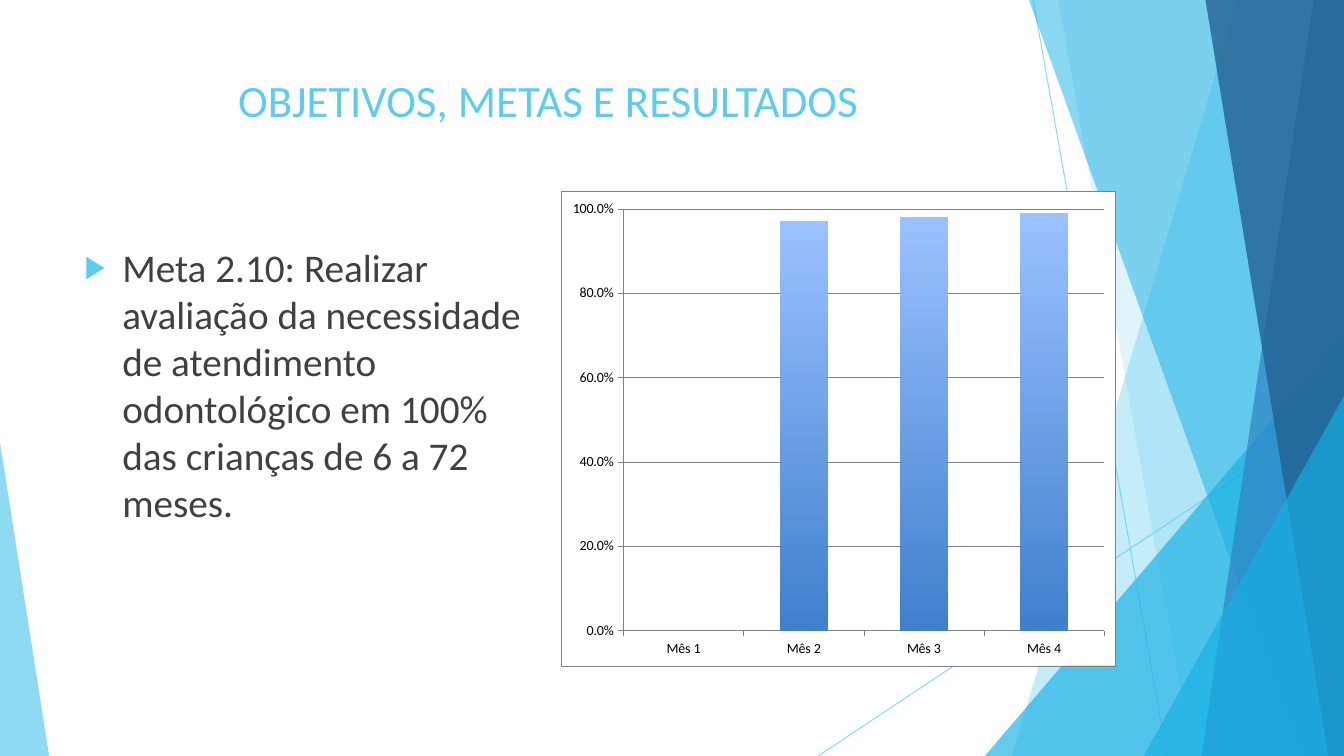
from lxml import etree
from pptx import Presentation
from pptx import util as u
from pptx.chart import data as cd
from pptx.dml import color as dc
from pptx.enum import chart as ec
from pptx.enum import shapes as es
from pptx.enum import text as et
from pptx.oxml import ns
from pptx.oxml import parse_xml

HUES = {
    "sky": "5FCBEF", "cyan": "17B0E4", "blue": "2E83C3", "navy": "226292",
    "ink": "404040", "black": "000000", "white": "FFFFFF", "grey": "808080",
    "light": "9BC1FF", "deep": "3F80CD",
}
WIDE, HIGH = 33.87, 19.05


def rgb(name):
    return dc.RGBColor.from_string(HUES[name])


def cms(*sizes):
    return [u.Cm(size) for size in sizes]


def fade(shape, alpha):
    for node in shape._element.spPr.iter(ns.qn("a:srgbClr")):
        etree.SubElement(node, ns.qn("a:alpha"), val=str(alpha * 1000))


def paint(shape, hue, alpha):
    shape.shadow.inherit = False
    shape.fill.solid()
    shape.fill.fore_color.rgb = rgb(hue)
    shape.line.fill.background()
    fade(shape, alpha)


def pen(line, hue="grey", width=0.25):
    line.color.rgb = rgb(hue)
    line.width = u.Pt(width)


def write(holder, words, size, hue, align=et.PP_ALIGN.LEFT, before=0, bullet=None):
    frame = holder.text_frame
    frame.word_wrap = True
    frame.auto_size = et.MSO_AUTO_SIZE.NONE
    frame.vertical_anchor = et.MSO_ANCHOR.TOP
    para = frame.paragraphs[0]
    para.alignment = align
    para.space_before = u.Pt(before)
    run = para.add_run()
    run.text = words
    run.font.name = "Calibri"
    run.font.size = u.Pt(size)
    run.font.color.rgb = rgb(hue)
    if bullet:
        props = para._p.get_or_add_pPr()
        props.set("marL", str(u.Cm(0.95)))
        props.set("indent", str(-u.Cm(0.95)))
        tint = etree.SubElement(props, ns.qn("a:buClr"))
        etree.SubElement(tint, ns.qn("a:srgbClr"), val=HUES["sky"])
        etree.SubElement(props, ns.qn("a:buSzPct"), val="80000")
        etree.SubElement(props, ns.qn("a:buFont"), typeface="Calibri")
        etree.SubElement(props, ns.qn("a:buChar"), char=bullet)


def place(holder, box):
    holder.left, holder.top, holder.width, holder.height = cms(*box)


def ray(slide, start, end):
    line = slide.shapes.add_connector(es.MSO_CONNECTOR.STRAIGHT, *cms(*start, *end))
    pen(line.line, "sky", 0.75)
    fade(line, 70)
    etree.SubElement(line._element.spPr, ns.qn("a:effectLst"))


def facet(slide, box, upper, lower, hue, alpha):
    left, top, wide, high = box
    right, base = left + wide, top + high
    form = slide.shapes.build_freeform(*cms(right - upper, top), scale=1.0)
    corners = [(right, top), (right, base), (right - lower, base)]
    form.add_line_segments([cms(*spot) for spot in corners], close=True)
    paint(form.convert_to_shape(), hue, alpha)


def wedge(slide, box, wide, high, peak, hue, alpha):
    left = box[0] + peak * (box[2] - wide)
    top = box[1] + box[3] - high
    shape = slide.shapes.add_shape(
        es.MSO_SHAPE.ISOSCELES_TRIANGLE, *cms(left, top, wide, high))
    shape.adjustments[0] = peak
    paint(shape, hue, alpha)


def decor(slide, box):
    left, top, wide, high = box
    right, base = left + wide, top + high
    ray(slide, (right - 7.83, top), (right - 4.46, base))
    ray(slide, (right, top + 10.24), (right - 13.25, base))
    facet(slide, box, 2.68, 8.37, "sky", 36)
    facet(slide, box, 7.2, 3.82, "sky", 20)
    wedge(slide, box, 9.05, 10.59, 1, "cyan", 66)
    facet(slide, box, 7.94, 1.08, "cyan", 50)
    facet(slide, box, 0.77, 3.59, "blue", 70)
    facet(slide, box, 3.49, 0.39, "navy", 80)
    wedge(slide, box, 5.05, 9.07, 1, "cyan", 66)
    wedge(slide, box, 1.24, 7.9, 0, "sky", 70)


def panel(edge=""):
    return parse_xml(
        f'<c:spPr {ns.nsdecls("c", "a")}><a:solidFill><a:srgbClr val="{HUES["white"]}"/>'
        f'</a:solidFill>{edge}</c:spPr>')


def graph(slide, box):
    data = cd.CategoryChartData(number_format="0.0%")
    data.categories = [f"Mês {month}" for month in range(1, 5)]
    data.add_series("Series 1", (0, 0.97, 0.98, 0.99))
    chart = slide.shapes.add_chart(
        ec.XL_CHART_TYPE.COLUMN_CLUSTERED, *cms(*box), data).chart
    chart.has_legend = False
    chart.has_title = False
    chart.font.name = "Calibri"
    chart.font.size = u.Pt(10)
    chart.font.color.rgb = rgb("black")
    for axis in (chart.category_axis, chart.value_axis):
        axis.major_tick_mark = ec.XL_TICK_MARK.OUTSIDE
        axis.minor_tick_mark = ec.XL_TICK_MARK.NONE
        pen(axis.format.line)
    scale = chart.value_axis
    scale.minimum_scale, scale.maximum_scale, scale.major_unit = 0, 1, 0.2
    scale.has_major_gridlines = True
    pen(scale.major_gridlines.format.line)
    scale.tick_labels.number_format = "0.0%"
    scale.tick_labels.number_format_is_linked = False
    plot = chart.plots[0]
    plot.gap_width = 150
    plot.vary_by_categories = False
    fill = plot.series[0].format.fill
    fill.gradient()
    fill.gradient_angle = 270
    for stop, hue in zip(fill.gradient_stops, ("light", "deep")):
        stop.color.rgb = rgb(hue)
    root = chart._chartSpace
    edge = (f'<a:ln w="{u.Pt(0.25)}"><a:solidFill><a:srgbClr val="{HUES["grey"]}"/>'
            '</a:solidFill></a:ln>')
    root.find(ns.qn("c:txPr")).addprevious(panel(edge))
    root.find(".//" + ns.qn("c:plotArea")).append(panel())


def goal(slide, box):
    left, top = box[:2]
    decor(slide, box)
    title, body = slide.placeholders
    place(title, (left + 1.88, top + 1.7, 23.88, 3.66))
    write(title, "OBJETIVOS, METAS E RESULTADOS", 32, "sky", align=et.PP_ALIGN.CENTER)
    place(body, (left + 1.88, top + 6, 11.63, 10.77))
    write(body, "Meta 2.10: Realizar avaliação da necessidade de atendimento "
          "odontológico em 100% das crianças de 6 a 72 meses.",
          28, "ink", before=10, bullet="▶")
    graph(slide, (left + 14.15, top + 4.82, 13.96, 11.96))


def main():
    deck = Presentation()
    deck.slide_width, deck.slide_height = cms(WIDE, HIGH)
    slide = deck.slides.add_slide(deck.slide_layouts[1])
    goal(slide, (0, 0, WIDE, HIGH))
    deck.save("out.pptx")


if __name__ == "__main__":
    main()
